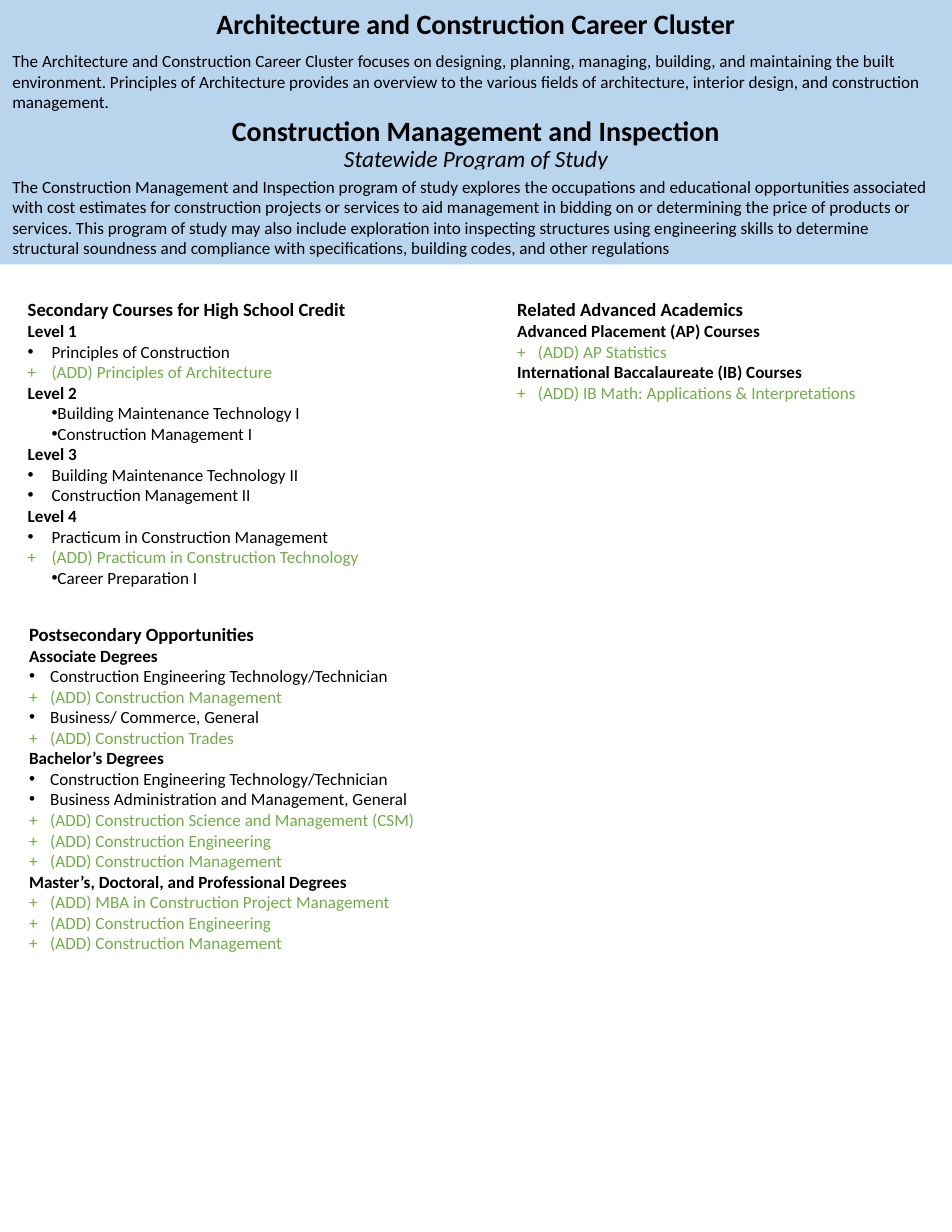
"""Build a one-page program of study sheet for a career cluster."""
from lxml import etree
from pptx import Presentation
from pptx import util as u
from pptx.dml import color
from pptx.enum import shapes, text
from pptx.oxml import ns

COLORS = {"band": "B9D4ED", "ink": "000000", "added": "70AD47"}
PAGE_WIDTH = 21.59
WIDE, NARROW = (0.28, 0.15), (0.25, 0.13)

CLUSTER = (
    "The Architecture and Construction Career Cluster focuses on designing, planning, managing, "
    "building, and maintaining the built environment. Principles of Architecture provides an "
    "overview to the various fields of architecture, interior design, and construction management."
)
PROGRAM = (
    "The Construction Management and Inspection program of study explores the occupations and "
    "educational opportunities associated with cost estimates for construction projects or services "
    "to aid management in bidding on or determining the price of products or services. This program "
    "of study may also include exploration into inspecting structures using engineering skills to "
    "determine structural soundness and compliance with specifications, building codes, and other "
    "regulations"
)
SECONDARY = [
    ("heading", "Secondary Courses for High School Credit"),
    ("level", "Level 1"),
    ("course", "Principles of Construction"),
    ("added", "Principles of Architecture"),
    ("level", "Level 2"),
    ("nested", "Building Maintenance Technology I"),
    ("nested", "Construction Management I"),
    ("level", "Level 3"),
    ("course", "Building Maintenance Technology II"),
    ("course", "Construction Management II"),
    ("level", "Level 4"),
    ("course", "Practicum in Construction Management"),
    ("added", "Practicum in Construction Technology"),
    ("nested", "Career Preparation I"),
]
ADVANCED = [
    ("heading", "Related Advanced Academics"),
    ("level", "Advanced Placement (AP) Courses"),
    ("added", "AP Statistics"),
    ("level", "International Baccalaureate (IB) Courses"),
    ("added", "IB Math: Applications & Interpretations"),
]
POSTSECONDARY = [
    ("heading", "Postsecondary Opportunities"),
    ("level", "Associate Degrees"),
    ("course", "Construction Engineering Technology/Technician"),
    ("added", "Construction Management"),
    ("course", "Business/ Commerce, General"),
    ("added", "Construction Trades"),
    ("level", "Bachelor’s Degrees"),
    ("course", "Construction Engineering Technology/Technician"),
    ("course", "Business Administration and Management, General"),
    ("added", "Construction Science and Management (CSM)"),
    ("added", "Construction Engineering"),
    ("added", "Construction Management"),
    ("level", "Master’s, Doctoral, and Professional Degrees"),
    ("added", "MBA in Construction Project Management"),
    ("added", "Construction Engineering"),
    ("added", "Construction Management"),
]


def set_frame(box, insets, anchor=text.MSO_ANCHOR.TOP):
    """Wrap the text of a box and set its insets and anchor."""
    frame = box.text_frame
    frame.word_wrap = True
    frame.vertical_anchor = anchor
    frame.margin_left = frame.margin_right = u.Cm(insets[0])
    frame.margin_top = frame.margin_bottom = u.Cm(insets[1])
    return frame


def add_band(page, top, height, insets=WIDE, anchor=text.MSO_ANCHOR.TOP):
    """Add a full-width coloured band and return its text frame."""
    band = page.shapes.add_shape(
        shapes.MSO_SHAPE.RECTANGLE, 0, u.Cm(top), u.Cm(PAGE_WIDTH), u.Cm(height)
    )
    band.shadow.inherit = False
    band.fill.solid()
    band.fill.fore_color.rgb = color.RGBColor.from_string(COLORS["band"])
    band.line.fill.background()
    return set_frame(band, insets, anchor)


def add_text(frame, words, size=11, bold=False, italic=False, ink="ink",
             centered=False, after=0, spacing=1.0):
    """Add one formatted paragraph to a frame, filling an empty first one."""
    para = frame.paragraphs[0] if not frame.text else frame.add_paragraph()
    para.alignment = text.PP_ALIGN.CENTER if centered else text.PP_ALIGN.LEFT
    para.space_before, para.space_after = u.Pt(0), u.Pt(after)
    para.line_spacing = spacing
    span = para.add_run()
    span.text = words
    span.font.name = "Calibri"
    span.font.size = u.Pt(size)
    span.font.bold, span.font.italic = bold, italic
    span.font.color.rgb = color.RGBColor.from_string(COLORS[ink])
    return para


def set_indent(para, left, first, bullet=None):
    """Indent a paragraph and give it a bullet if one is named."""
    settings = para._p.get_or_add_pPr()
    settings.set("marL", str(u.Cm(left)))
    settings.set("indent", str(u.Cm(first)))
    if bullet:
        etree.SubElement(settings, ns.qn("a:buFont")).set("typeface", "Arial")
        etree.SubElement(settings, ns.qn("a:buChar")).set("char", bullet)


def add_list(page, left, top, width, height, items, hang, insets=NARROW):
    """Add a text box listing headings, levels, courses and additions."""
    box = page.shapes.add_textbox(u.Cm(left), u.Cm(top), u.Cm(width), u.Cm(height))
    frame = set_frame(box, insets)
    for kind, words in items:
        if kind == "heading":
            add_text(frame, words, size=12, bold=True)
        elif kind == "level":
            add_text(frame, words, bold=True)
        elif kind == "added":
            para = add_text(frame, f"+\t(ADD) {words}", ink="added")
            set_indent(para, hang, -hang)
        else:
            first = 0 if kind == "nested" else -hang
            set_indent(add_text(frame, words), hang, first, "•")


def main():
    """Build the sheet and save it."""
    deck = Presentation()
    deck.slide_width, deck.slide_height = u.Cm(PAGE_WIDTH), u.Cm(27.94)
    page = deck.slides.add_slide(deck.slide_layouts[6])

    title = add_band(page, 2.39, 1.78, NARROW, text.MSO_ANCHOR.MIDDLE)
    add_text(title, "Construction Management and Inspection",
             size=18, bold=True, centered=True, spacing=0.9)
    add_text(title, "Statewide Program of Study",
             size=15, italic=True, centered=True, spacing=0.9)

    cluster = add_band(page, 0, 2.72)
    add_text(cluster, "Architecture and Construction Career Cluster",
             size=18, bold=True, centered=True, after=6.6)
    add_text(cluster, CLUSTER)
    add_text(add_band(page, 3.84, 2.16), PROGRAM)

    add_list(page, 0.38, 6.63, 10.41, 7.72, SECONDARY, 0.54)
    add_list(page, 11.48, 6.63, 10.11, 3.86, ADVANCED, 0.47)
    add_list(page, 0.38, 13.97, 9.91, 8.79, POSTSECONDARY, 0.48, WIDE)
    deck.save("out.pptx")


if __name__ == "__main__":
    main()
